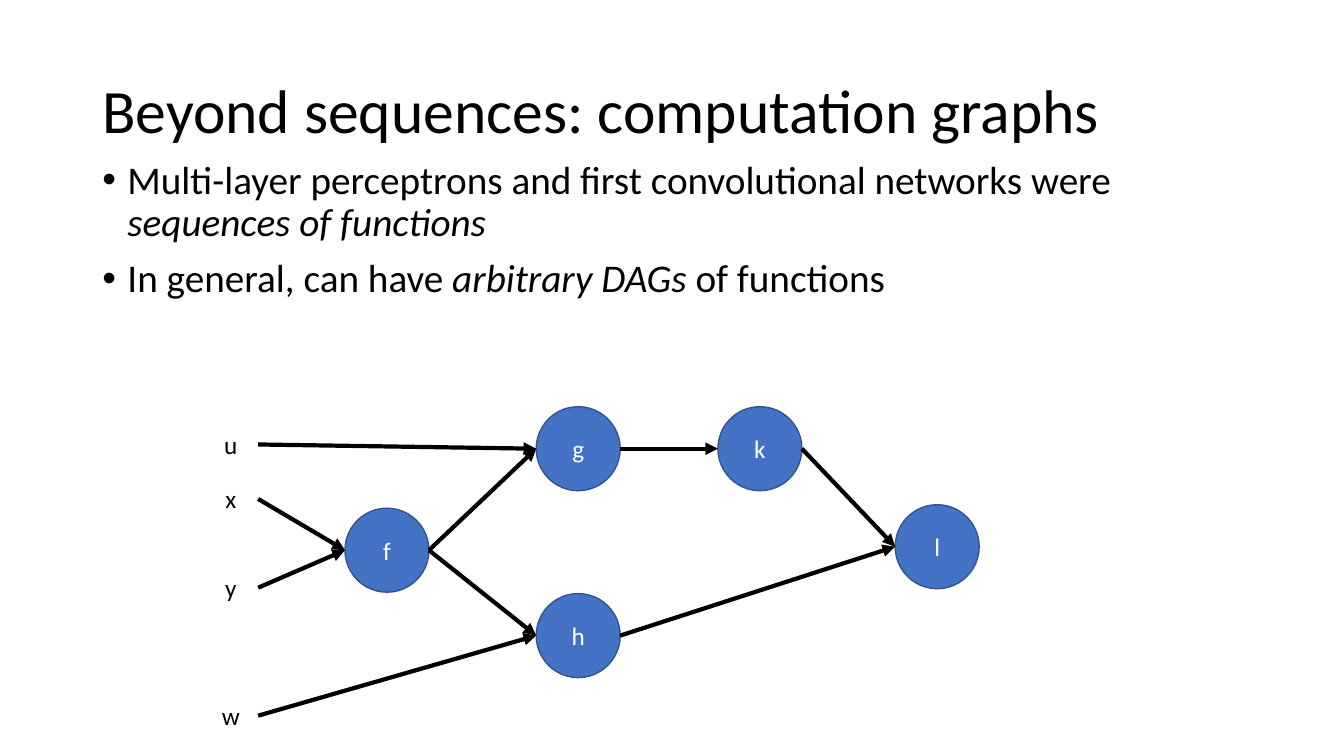
from lxml import etree
from pptx import Presentation
from pptx.dml.color import RGBColor
from pptx.enum.shapes import MSO_CONNECTOR, MSO_SHAPE
from pptx.enum.text import MSO_ANCHOR, PP_ALIGN
from pptx.oxml.ns import qn
from pptx.util import Pt

STRAIGHT = MSO_CONNECTOR.STRAIGHT
ELLIPSE = MSO_SHAPE.OVAL
TOP, MIDDLE = MSO_ANCHOR.TOP, MSO_ANCHOR.MIDDLE
CENTER = PP_ALIGN.CENTER

BLACK = RGBColor(0x00, 0x00, 0x00)
WHITE = RGBColor(0xFF, 0xFF, 0xFF)
BLUE = RGBColor(0x44, 0x72, 0xC4)
DARK_BLUE = RGBColor(0x32, 0x54, 0x91)

FONT = "Calibri"
NODE_SIZE = 60
INPUT_LEFT, INPUT_WIDTH, INPUT_HEIGHT = 145.4, 39, 29

# Left and vertical centre of each function node
NODES = {
    "f": (246.4, 393),
    "h": (383, 454),
    "g": (383, 320.5),
    "k": (512.8, 320.5),
    "l": (639.4, 390.5),
}
# Vertical centre of each input
INPUTS = {"x": 356.4, "y": 419.8, "w": 511.2, "u": 317.5}
EDGES = ["xf", "yf", "fg", "ug", "wh", "fh", "gk", "kl", "hl"]

BULLETS = [
    [("Multi-layer perceptrons and first convolutional networks were ", False),
     ("sequences of functions", True)],
    [("In general, can have ", False),
     ("arbitrary DAGs ", True),
     ("of functions", False)],
]


def add_span(para, text, size, color=BLACK, italic=False):
    span = para.add_run()
    span.text = text
    span.font.name = FONT
    span.font.size = Pt(size)
    span.font.color.rgb = color
    span.font.italic = italic


def add_text_box(page, left, top, width, height, anchor=TOP):
    box = page.shapes.add_textbox(Pt(left), Pt(top), Pt(width), Pt(height))
    box.text_frame.word_wrap = True
    box.text_frame.vertical_anchor = anchor
    return box.text_frame


def add_title(page, text):
    frame = add_text_box(page, 66, 28.8, 828, 104.4, MIDDLE)
    para = frame.paragraphs[0]
    para.line_spacing = 0.9
    add_span(para, text, 44)


def add_bullets(page, bullets):
    frame = add_text_box(page, 66, 110.9, 828, 342.7)
    for index, spans in enumerate(bullets):
        para = frame.add_paragraph() if index else frame.paragraphs[0]
        para.line_spacing = 0.9
        para.space_before = Pt(10)
        # Hanging indent with a round bullet
        properties = para._p.get_or_add_pPr()
        properties.set("marL", str(Pt(18)))
        properties.set("indent", str(-Pt(18)))
        etree.SubElement(properties, qn("a:buFont")).set("typeface", "Arial")
        etree.SubElement(properties, qn("a:buChar")).set("char", "•")
        for text, italic in spans:
            add_span(para, text, 28, italic=italic)


def add_node(page, name, left, middle):
    node = page.shapes.add_shape(ELLIPSE, Pt(left), Pt(middle - NODE_SIZE / 2),
                                 Pt(NODE_SIZE), Pt(NODE_SIZE))
    node.shadow.inherit = False
    node.fill.solid()
    node.fill.fore_color.rgb = BLUE
    node.line.color.rgb = DARK_BLUE
    node.line.width = Pt(1)
    node.text_frame.vertical_anchor = MIDDLE
    para = node.text_frame.paragraphs[0]
    para.alignment = CENTER
    add_span(para, name, 18, WHITE)


def add_input(page, name, middle):
    frame = add_text_box(page, INPUT_LEFT, middle - INPUT_HEIGHT / 2,
                         INPUT_WIDTH, INPUT_HEIGHT)
    para = frame.paragraphs[0]
    para.alignment = CENTER
    add_span(para, name, 18)


def right_end(name):
    if name in INPUTS:
        return INPUT_LEFT + INPUT_WIDTH, INPUTS[name]
    left, middle = NODES[name]
    return left + NODE_SIZE, middle


def add_arrow(page, source, target):
    start, end = right_end(source), NODES[target]
    arrow = page.shapes.add_connector(STRAIGHT, *map(Pt, start + end))
    arrow.line.color.rgb = BLACK
    arrow.line.width = Pt(3)
    etree.SubElement(arrow.line._get_or_add_ln(), qn("a:tailEnd")).set("type", "triangle")
    etree.SubElement(arrow._element.spPr, qn("a:effectLst"))


def main():
    deck = Presentation()
    deck.slide_width, deck.slide_height = Pt(960), Pt(540)
    page = deck.slides.add_slide(deck.slide_layouts[6])

    # Heading and bullets
    add_title(page, "Beyond sequences: computation graphs")
    add_bullets(page, BULLETS)

    # Computation graph
    for name, (left, middle) in NODES.items():
        add_node(page, name, left, middle)
    for name, middle in INPUTS.items():
        add_input(page, name, middle)
    for source, target in EDGES:
        add_arrow(page, source, target)

    deck.save("out.pptx")


if __name__ == "__main__":
    main()
